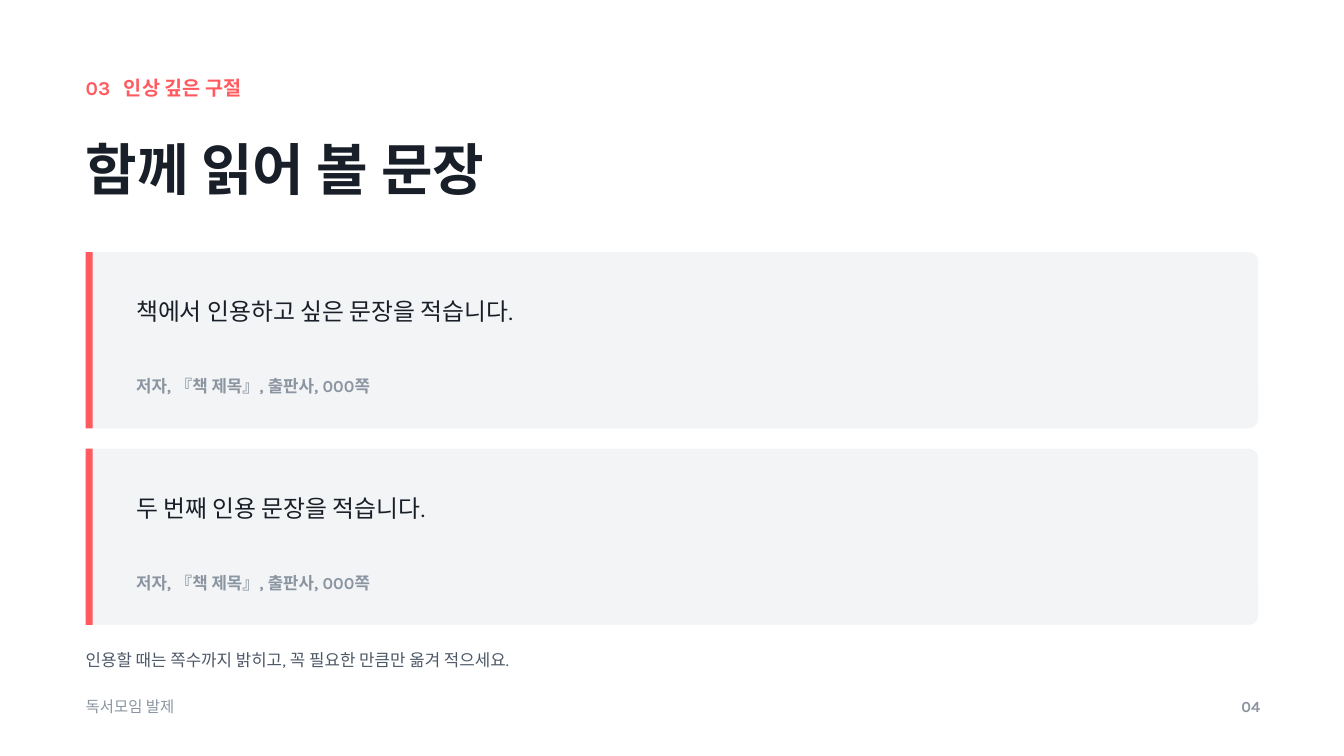
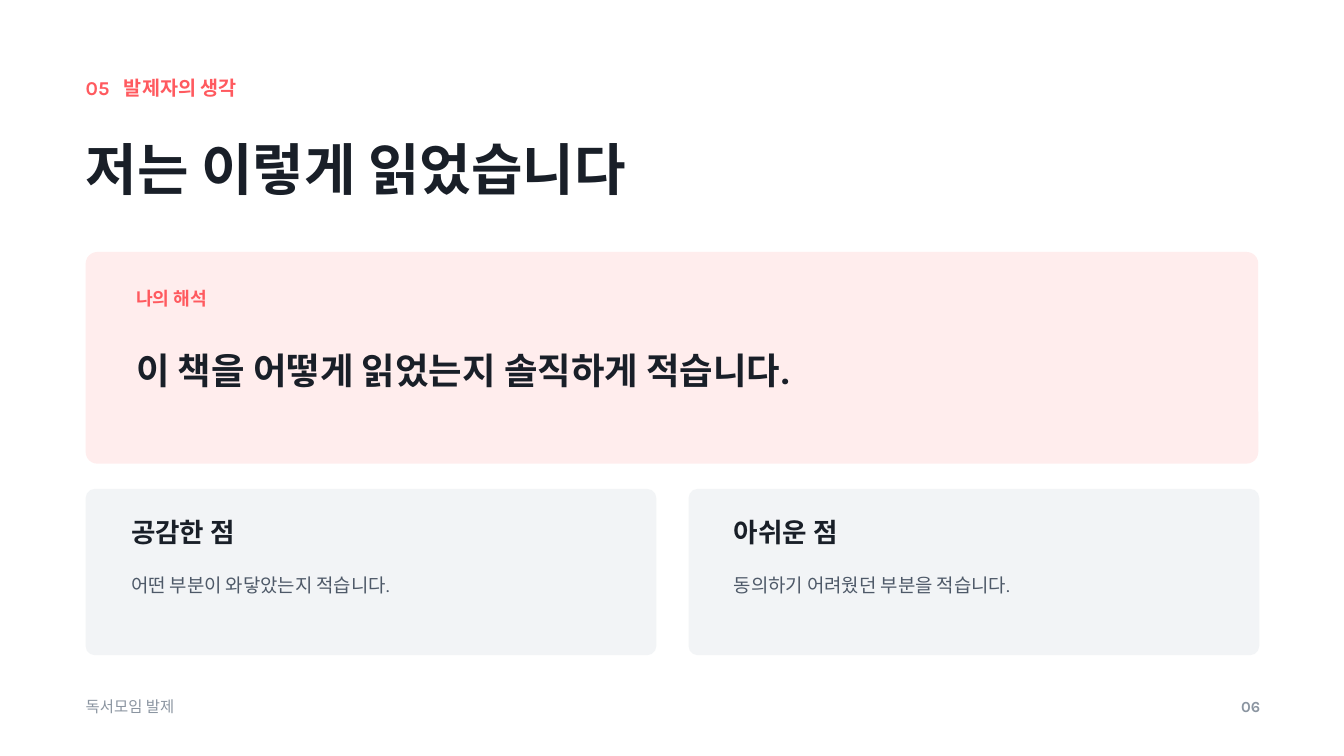
from lxml import etree
from pptx import Presentation
from pptx import util as u
from pptx.dml import color
from pptx.enum import shapes, text
from pptx.oxml import ns

FONT = "Karla"
CORAL, BLUSH, PANEL = "FF5A5F", "FFEDED", "F2F4F6"
INK, BODY, MUTED = "191F28", "4E5968", "8B95A1"
LEFT, WIDTH, TOP = 85, 1163, 250


def px(length):
    """Turn whole pixels, 100 to the inch, into EMU."""
    return u.Emu(length * 9144)


def rgb(value):
    """Turn a hex string into a colour."""
    return color.RGBColor.from_string(value)


def write(paragraph, words, size=12, fill=INK, bold=False, spacing=None, align=None, tab=None):
    """Write one formatted run into a paragraph."""
    if spacing:
        paragraph.line_spacing = spacing
    if align:
        paragraph.alignment = align
    if tab:
        stops = etree.SubElement(paragraph._p.get_or_add_pPr(), ns.qn("a:tabLst"))
        etree.SubElement(stops, ns.qn("a:tab"), pos=str(px(tab)), algn="l")
    run = paragraph.add_run()
    run.text = words
    run.font.name = FONT
    run.font.size = u.Pt(size)
    run.font.bold = bold
    run.font.color.rgb = rgb(fill)


class Deck:
    """Hold the shared style and the current slide."""

    def __init__(self):
        """Start a widescreen presentation."""
        self.presentation = Presentation()
        self.presentation.slide_width = px(1333)
        self.presentation.slide_height = px(750)
        self.slide = None

    def label(self, words, left, top, width, height, **style):
        """Add a text box without margins."""
        box = self.slide.shapes.add_textbox(px(left), px(top), px(width), px(height))
        frame = box.text_frame
        frame.word_wrap = True
        frame.auto_size = text.MSO_AUTO_SIZE.SHAPE_TO_FIT_TEXT
        frame.margin_left = frame.margin_right = frame.margin_top = frame.margin_bottom = 0
        write(frame.paragraphs[0], words, **style)

    def block(self, left, top, width, height, fill, kind=shapes.MSO_SHAPE.RECTANGLE):
        """Add a plain filled shape."""
        shape = self.slide.shapes.add_shape(kind, px(left), px(top), px(width), px(height))
        shape.shadow.inherit = False
        shape.fill.solid()
        shape.fill.fore_color.rgb = rgb(fill)
        shape.line.fill.background()
        return shape

    def card(self, left, top, width, height, fill=PANEL):
        """Add a panel with rounded corners."""
        shape = self.block(left, top, width, height, fill, shapes.MSO_SHAPE.ROUNDED_RECTANGLE)
        shape.adjustments[0] = 0.055

    def page(self, number, section, title):
        """Start a slide with its section, title and footer."""
        self.slide = self.presentation.slides.add_slide(self.presentation.slide_layouts[6])
        self.label(f"{number - 1:02}\t{section}", LEFT, 75, 700, 32,
                   size=14, fill=CORAL, bold=True, tab=38)
        self.label(title, LEFT, 120, 1080, 153, size=40, bold=True, spacing=1.2)
        self.label("독서모임 발제", LEFT, 692, 800, 30, size=11, fill=MUTED)
        self.label(f"{number:02}", 1150, 692, 100, 30, size=11, fill=MUTED, bold=True,
                   align=text.PP_ALIGN.RIGHT)

    def quote(self, top, sentence, citation):
        """Add a quotation card with an accent bar."""
        self.card(LEFT, top, WIDTH, 175)
        self.block(LEFT, top, 7, 175, CORAL)
        self.label(sentence, LEFT + 50, top + 32, WIDTH - 90, 85, size=17, spacing=1.45)
        self.label(citation, LEFT + 50, top + 123, WIDTH - 90, 30, fill=MUTED, bold=True)

    def opinion(self, left, top, width, heading, detail):
        """Add a card with a heading and a detail line."""
        self.card(left, top, width, 165)
        self.label(heading, left + 45, top + 27, width - 90, 40, size=19, bold=True)
        self.label(detail, left + 45, top + 75, width - 90, 70, size=13.5, fill=BODY, spacing=1.4)


def quotes_slide(deck):
    """Build the slide of quoted sentences."""
    deck.page(4, "인상 깊은 구절", "함께 읽어 볼 문장")
    sentences = ("책에서 인용하고 싶은 문장을 적습니다.", "두 번째 인용 문장을 적습니다.")
    for index, sentence in enumerate(sentences):
        deck.quote(TOP + index * 195, sentence, "저자, 『책 제목』, 출판사, 000쪽")
    deck.label("인용할 때는 쪽수까지 밝히고, 꼭 필요한 만큼만 옮겨 적으세요.",
               LEFT, 645, WIDTH, 30, fill=BODY)


def thoughts_slide(deck):
    """Build the slide of the presenter's reading."""
    deck.page(6, "발제자의 생각", "저는 이렇게 읽었습니다")
    deck.card(LEFT, TOP, WIDTH, 210, BLUSH)
    deck.label("나의 해석", LEFT + 50, TOP + 35, 350, 32, size=13, fill=CORAL, bold=True)
    deck.label("이 책을 어떻게 읽었는지 솔직하게 적습니다.", LEFT + 50, TOP + 80, WIDTH - 100, 110,
               size=26, bold=True, spacing=1.35)
    opinions = (("공감한 점", "어떤 부분이 와닿았는지 적습니다."),
                ("아쉬운 점", "동의하기 어려웠던 부분을 적습니다."))
    width, gap = 566, 32
    for index, (heading, detail) in enumerate(opinions):
        deck.opinion(LEFT + index * (width + gap), 485, width, heading, detail)


def main():
    """Build and save the presentation."""
    deck = Deck()
    quotes_slide(deck)
    thoughts_slide(deck)
    deck.presentation.save("out.pptx")


if __name__ == "__main__":
    main()
